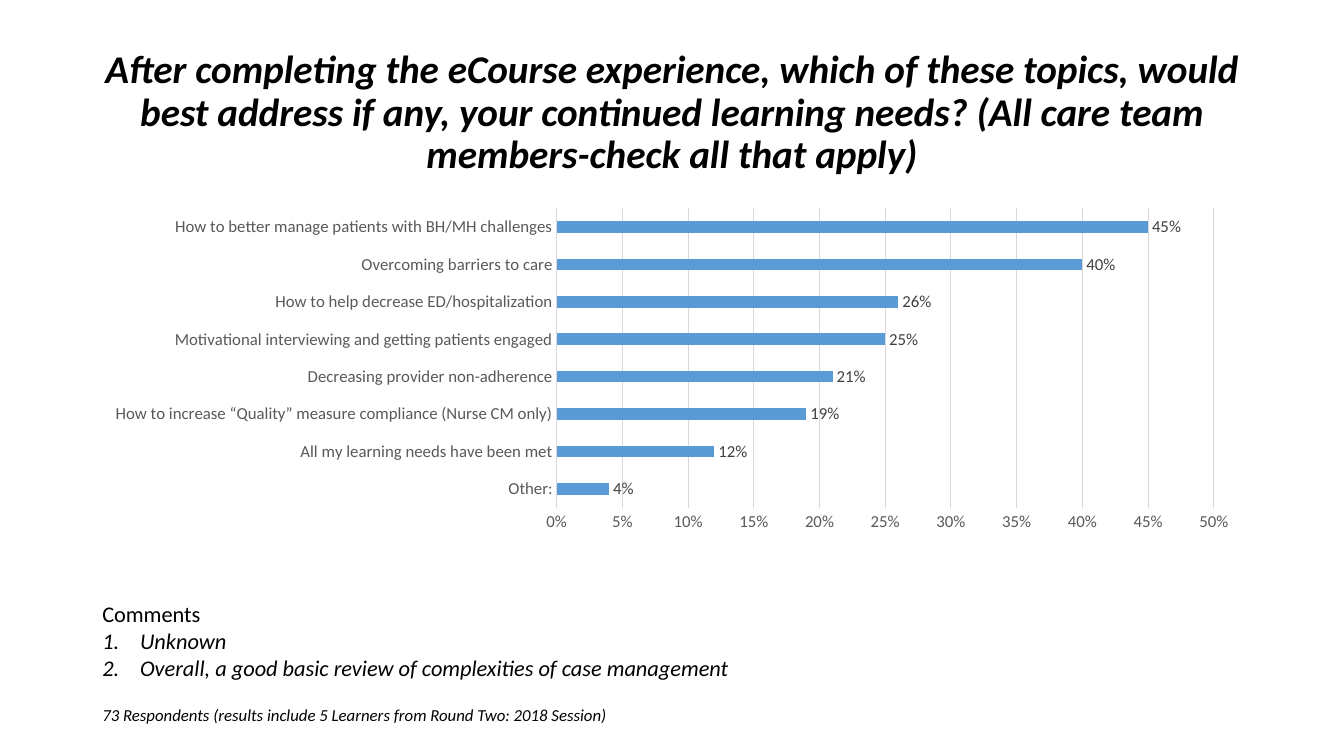
"""Build the slide on learners' continued learning needs."""
from typing import Any, NamedTuple

import lxml.etree
import pptx
import pptx.chart.data
import pptx.dml.color
import pptx.enum.chart
import pptx.enum.text
import pptx.oxml.ns
import pptx.util

BLACK = pptx.dml.color.RGBColor(0x00, 0x00, 0x00)
LABEL_GRAY = pptx.dml.color.RGBColor(0x40, 0x40, 0x40)
AXIS_GRAY = pptx.dml.color.RGBColor(0x59, 0x59, 0x59)
GRID_GRAY = pptx.dml.color.RGBColor(0xD9, 0xD9, 0xD9)
BAR_BLUE = pptx.dml.color.RGBColor(0x5B, 0x9B, 0xD5)
FONT = "Calibri"
LEFT = 66
WIDTH = 828
NUMBER_INDENT = 27


class Topic(NamedTuple):
    label: str
    share: float


class Comment(NamedTuple):
    text: str
    size: float = 16
    italic: bool = True
    numbered: bool = False
    space_before: float = 0


TITLE = (
    "After completing the eCourse experience, which of these topics, would "
    "best address if any, your continued learning needs? "
    "(All care team members-check all that apply)"
)
TOPICS = [
    Topic("Other:", 0.04),
    Topic("All my learning needs have been met", 0.12),
    Topic("How to increase “Quality” measure compliance (Nurse CM only)", 0.19),
    Topic("Decreasing provider non-adherence", 0.21),
    Topic("Motivational interviewing and getting patients engaged", 0.25),
    Topic("How to help decrease ED/hospitalization", 0.26),
    Topic("Overcoming barriers to care", 0.40),
    Topic("How to better manage patients with BH/MH challenges", 0.45),
]
COMMENTS = [
    Comment("Comments", italic=False),
    Comment("Unknown", numbered=True),
    Comment("Overall, a good basic review of complexities of case management", numbered=True),
    Comment(
        "73 Respondents (results include 5 Learners from Round Two: 2018 Session)",
        size=12,
        space_before=17,
    ),
]


def style_font(font: Any, size: float, color: pptx.dml.color.RGBColor) -> None:
    font.name = FONT
    font.size = pptx.util.Pt(size)
    font.color.rgb = color


def add_box(slide: Any, left: float, top: float, width: float, height: float) -> Any:
    shape = slide.shapes.add_textbox(*map(pptx.util.Pt, (left, top, width, height)))
    shape.text_frame.word_wrap = True
    return shape.text_frame


def write_text(
    paragraph: Any,
    text: str,
    *,
    size: float,
    bold: bool = False,
    italic: bool = False,
    numbered: bool = False,
    space_before: float = 0,
) -> None:
    if numbered:
        properties = paragraph._p.get_or_add_pPr()
        indent = pptx.util.Pt(NUMBER_INDENT)
        properties.set("marL", str(indent))
        properties.set("indent", str(-indent))
        number = lxml.etree.SubElement(properties, pptx.oxml.ns.qn("a:buAutoNum"))
        number.set("type", "arabicPeriod")
    if space_before:
        paragraph.space_before = pptx.util.Pt(space_before)
    run = paragraph.add_run()
    run.text = text
    style_font(run.font, size, BLACK)
    run.font.bold = bold
    run.font.italic = italic


def add_title(slide: Any) -> None:
    frame = add_box(slide, LEFT, 28.75, WIDTH, 104.5)
    frame.vertical_anchor = pptx.enum.text.MSO_ANCHOR.MIDDLE
    paragraph = frame.paragraphs[0]
    paragraph.alignment = pptx.enum.text.PP_ALIGN.CENTER
    paragraph.line_spacing = 0.9
    write_text(paragraph, TITLE, size=28, bold=True, italic=True)


def style_axis(axis: Any) -> None:
    axis.major_tick_mark = pptx.enum.chart.XL_TICK_MARK.NONE
    axis.minor_tick_mark = pptx.enum.chart.XL_TICK_MARK.NONE
    style_font(axis.tick_labels.font, 12, AXIS_GRAY)


def style_line(line: Any) -> None:
    line.color.rgb = GRID_GRAY
    line.width = pptx.util.Pt(0.75)


def add_topic_chart(slide: Any) -> None:
    data = pptx.chart.data.CategoryChartData(number_format="0%")
    data.categories = [topic.label for topic in TOPICS]
    data.add_series("Series 1", [topic.share for topic in TOPICS])
    chart = slide.shapes.add_chart(
        pptx.enum.chart.XL_CHART_TYPE.BAR_CLUSTERED,
        *map(pptx.util.Pt, (LEFT, 144, WIDTH, 240.5)),
        data,
    ).chart
    style_font(chart.font, 10, BLACK)
    chart.has_title = False
    chart.has_legend = False

    style_axis(chart.category_axis)
    style_line(chart.category_axis.format.line)
    value_axis = chart.value_axis
    style_axis(value_axis)
    value_axis.minimum_scale = 0
    value_axis.maximum_scale = 0.5
    value_axis.major_unit = 0.05
    value_axis.tick_labels.number_format = "0%"
    value_axis.tick_labels.number_format_is_linked = False
    value_axis.format.line.fill.background()
    style_line(value_axis.major_gridlines.format.line)

    plot = chart.plots[0]
    plot.gap_width = 219
    plot.vary_by_categories = False
    series = plot.series[0]
    series.format.fill.solid()
    series.format.fill.fore_color.rgb = BAR_BLUE
    labels = series.data_labels
    labels.show_value = True
    labels.number_format = "0%"
    labels.number_format_is_linked = False
    labels.position = pptx.enum.chart.XL_LABEL_POSITION.OUTSIDE_END
    style_font(labels.font, 12, LABEL_GRAY)


def add_comments(slide: Any) -> None:
    frame = add_box(slide, LEFT, 425, 678, 98)
    for index, comment in enumerate(COMMENTS):
        paragraph = frame.add_paragraph() if index else frame.paragraphs[0]
        write_text(
            paragraph,
            comment.text,
            size=comment.size,
            italic=comment.italic,
            numbered=comment.numbered,
            space_before=comment.space_before,
        )


def main() -> None:
    presentation = pptx.Presentation()
    presentation.slide_width = pptx.util.Pt(960)
    presentation.slide_height = pptx.util.Pt(540)
    slide = presentation.slides.add_slide(presentation.slide_layouts[6])
    add_title(slide)
    add_topic_chart(slide)
    add_comments(slide)
    presentation.save("out.pptx")


if __name__ == "__main__":
    main()
